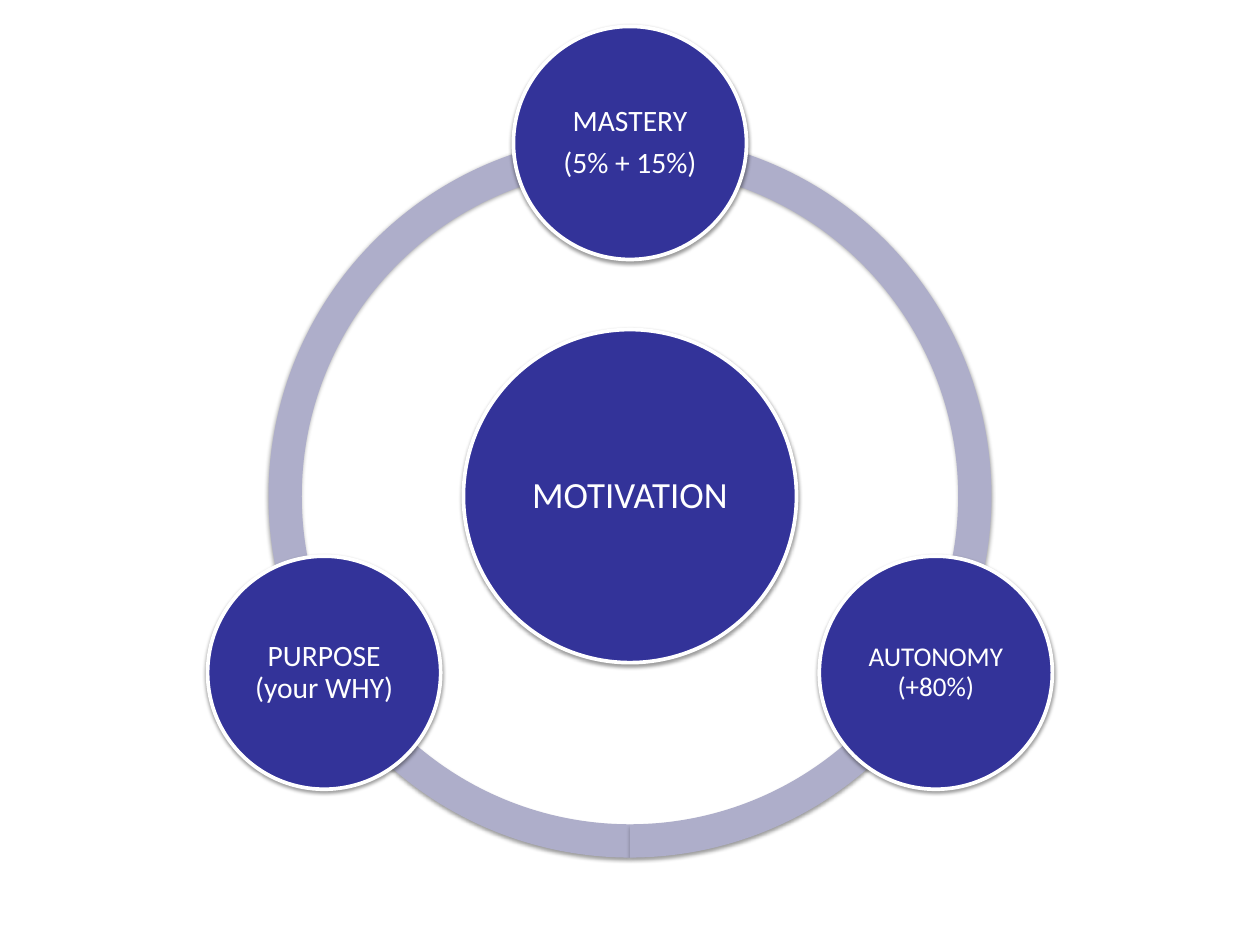
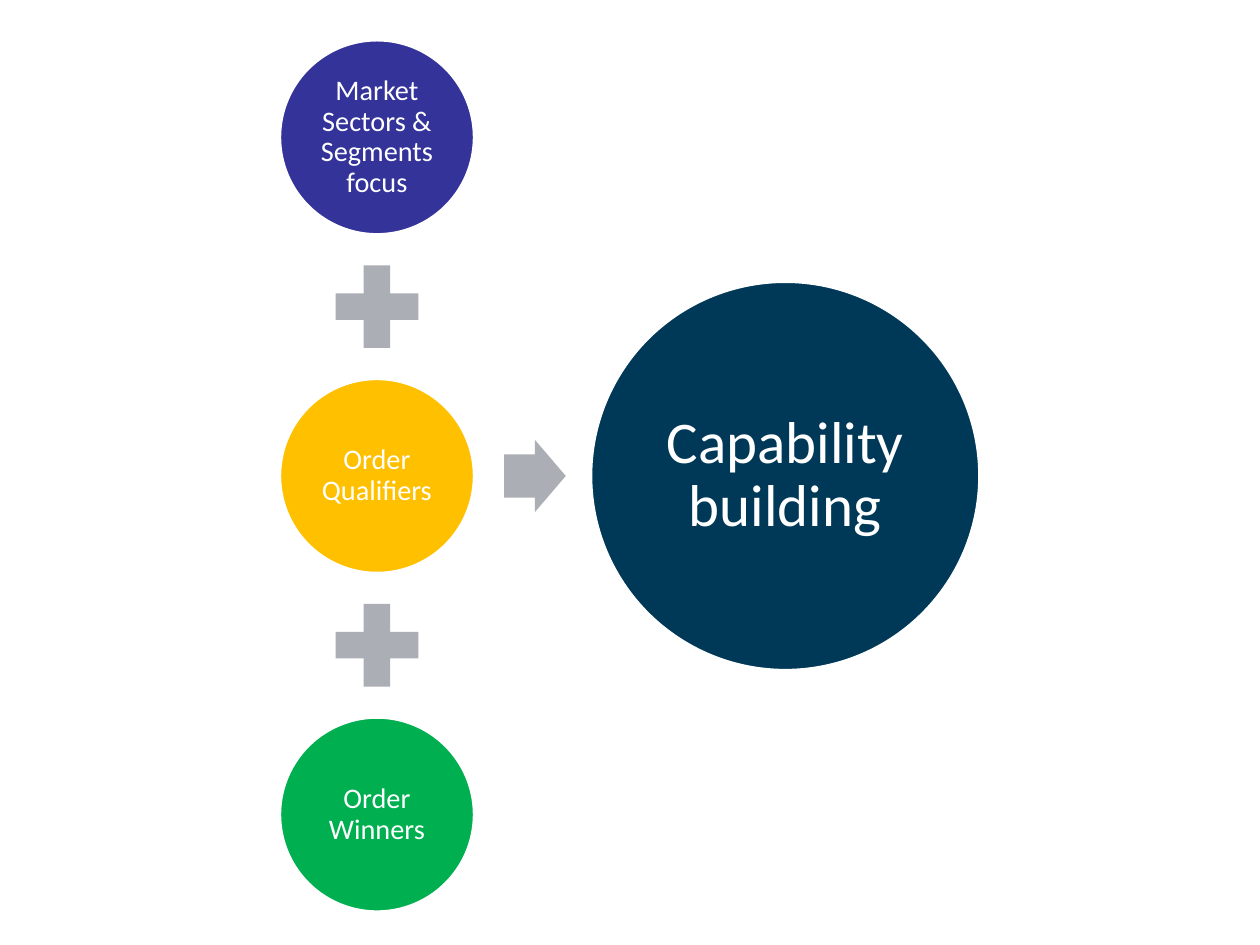
from math import cos, radians, sin

from lxml import etree
from pptx import Presentation
from pptx.dml.color import RGBColor
from pptx.enum.shapes import MSO_SHAPE
from pptx.enum.text import MSO_ANCHOR, PP_ALIGN
from pptx.oxml.ns import qn
from pptx.util import Pt

FONT = "Calibri"
WHITE, INDIGO, NAVY = "FFFFFF", "333399", "003958"
AMBER, GREEN, GRAY, LAVENDER = "FFC000", "00B050", "ABAFB5", "AEAECA"


def add_figure(slide, kind, center, size, color, outline=0, shadow=False):
    """Add a filled shape around its center; outline is the white line's width."""
    (x, y), (width, height) = center, size
    shape = slide.shapes.add_shape(
        kind, Pt(x - width / 2), Pt(y - height / 2), Pt(width), Pt(height))
    shape.shadow.inherit = False
    shape.fill.solid()
    shape.fill.fore_color.rgb = RGBColor.from_string(color)
    if outline:
        shape.line.color.rgb = RGBColor.from_string(WHITE)
        shape.line.width = Pt(outline)
    else:
        shape.line.fill.background()
    if shadow:
        effects = shape.element.spPr.find(qn("a:effectLst"))
        outer = etree.SubElement(
            effects, qn("a:outerShdw"), blurRad=str(Pt(3.1)), dist=str(Pt(1.6)),
            dir="5400000", rotWithShape="0")
        black = etree.SubElement(outer, qn("a:srgbClr"), val="000000")
        etree.SubElement(black, qn("a:alpha"), val="38000")
    return shape


def add_disc(slide, center, diameter, color, lines, font_size, outline, shadow=False):
    """Add a circle with one centered paragraph for each of the lines."""
    disc = add_figure(slide, MSO_SHAPE.OVAL, center, (diameter, diameter),
                      color, outline, shadow)
    frame = disc.text_frame
    frame.word_wrap = True
    frame.vertical_anchor = MSO_ANCHOR.MIDDLE
    margin = Pt(font_size * 0.1)
    frame.margin_left = frame.margin_right = margin
    frame.margin_top = frame.margin_bottom = margin
    for index, line in enumerate(lines):
        paragraph = frame.add_paragraph() if index else frame.paragraphs[0]
        paragraph.alignment = PP_ALIGN.CENTER
        paragraph.line_spacing = 0.9
        paragraph.space_after = Pt(font_size * 0.35)
        run = paragraph.add_run()
        run.text = line
        run.font.name = FONT
        run.font.size = Pt(font_size)
        run.font.color.rgb = RGBColor.from_string(WHITE)


presentation = Presentation()
presentation.slide_width = Pt(1024)
presentation.slide_height = Pt(768)
blank_layout = presentation.slide_layouts[6]

# Slide 1: three sources of motivation on a ring
slide = presentation.slides.add_slide(blank_layout)
ring_center = (512, 403.2)
ring_diameter = 587.5
orbit_radius = 287

for start, end in ((90, 162), (18, 90), (162, 18)):
    arc = add_figure(slide, MSO_SHAPE.BLOCK_ARC, ring_center,
                     (ring_diameter, ring_diameter), LAVENDER, shadow=True)
    arc.adjustments[0] = start * 0.6  # 60000 units per degree, scaled by 100000
    arc.adjustments[1] = end * 0.6
    arc.adjustments[2] = 0.046

add_disc(slide, ring_center, 270.7, INDIGO, ["MOTIVATION"], 30, 3, shadow=True)

sources = [
    (["MASTERY", "(5% + 15%)"], 24),
    (["AUTONOMY (+80%)"], 22),
    (["PURPOSE (your WHY)"], 24),
]
for index, (lines, font_size) in enumerate(sources):
    angle = radians(-90 + index * 120)
    center = (ring_center[0] + orbit_radius * cos(angle),
              ring_center[1] + orbit_radius * sin(angle))
    add_disc(slide, center, 189.4, INDIGO, lines, font_size, 3, shadow=True)

# Slide 2: three inputs add up to capability building
slide = presentation.slides.add_slide(blank_layout)
column_x, middle_y, pitch = 306.4, 386.8, 275.2

inputs = [
    ("Market Sectors & Segments focus", INDIGO),
    ("Order Qualifiers", AMBER),
    ("Order Winners", GREEN),
]
for index, (label, color) in enumerate(inputs):
    y = middle_y + (index - 1) * pitch
    if index:
        add_figure(slide, MSO_SHAPE.MATH_PLUS, (column_x, y - pitch / 2),
                   (91.4, 91.4), GRAY)
    add_disc(slide, (column_x, y), 157.7, color, [label], 23, 2)

arrow = add_figure(slide, MSO_SHAPE.RIGHT_ARROW, (434.7, middle_y), (50.2, 58.7), GRAY)
arrow.adjustments[0] = 0.6
arrow.adjustments[1] = 0.5
add_disc(slide, (638.2, middle_y), 315.6, NAVY, ["Capability building"], 48, 2)

presentation.save("out.pptx")
